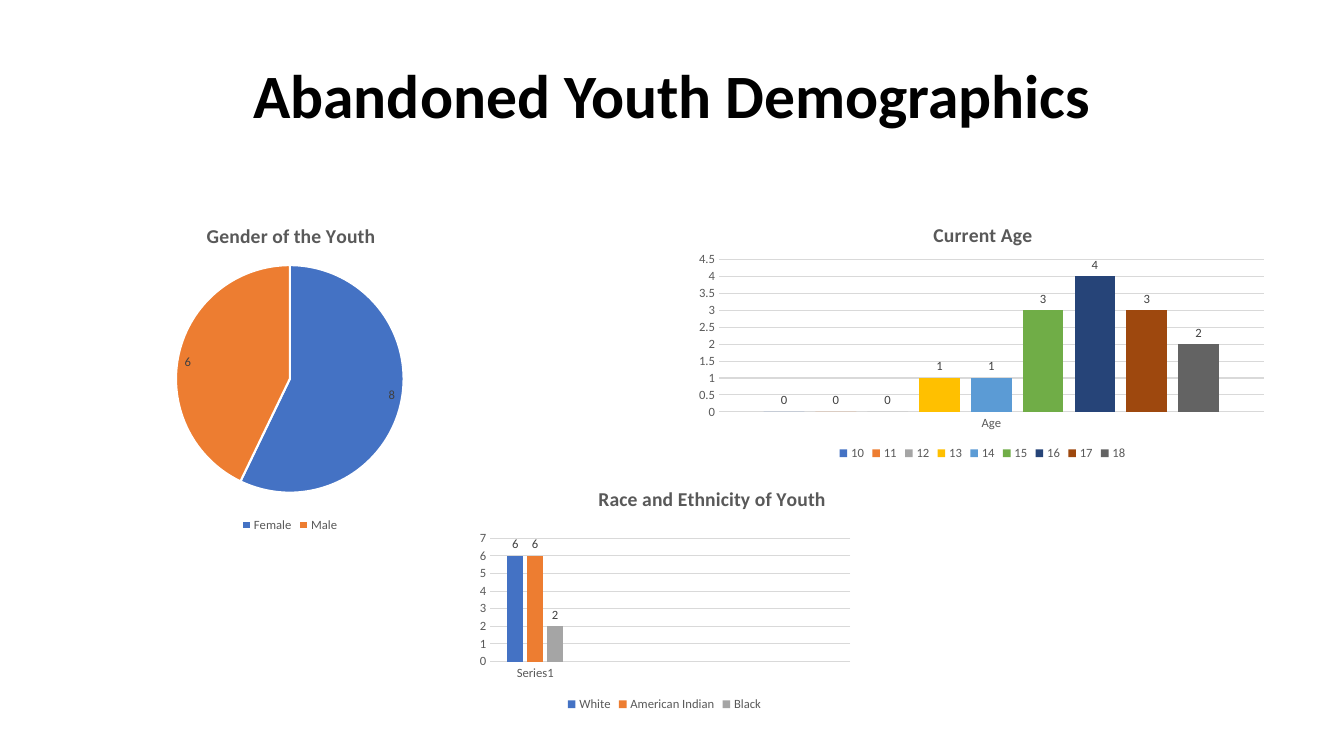
from lxml.etree import SubElement
from pptx import Presentation
from pptx.chart.data import CategoryChartData
from pptx.dml.color import RGBColor
from pptx.enum.chart import XL_CHART_TYPE, XL_LABEL_POSITION, XL_LEGEND_POSITION, XL_TICK_MARK
from pptx.enum.text import MSO_ANCHOR, PP_ALIGN
from pptx.oxml.ns import qn
from pptx.util import Inches, Pt


def style(font, size, color, bold=False):
    font.name = "Calibri"
    font.size = Pt(size)
    font.bold = bold
    font.color.rgb = RGBColor.from_string(color)


def place(parent, index, **fractions):
    for old in parent.findall(qn("c:layout")):
        parent.remove(old)
    layout = SubElement(parent, qn("c:layout"))
    manual = SubElement(layout, qn("c:manualLayout"))
    if "w" in fractions:
        SubElement(manual, qn("c:layoutTarget"), val="inner")
    for axis in "xy":
        SubElement(manual, qn(f"c:{axis}Mode"), val="edge")
    for key, value in fractions.items():
        SubElement(manual, qn(f"c:{key}"), val=str(value))
    parent.insert(index, layout)


PALETTE = ["4472C4", "ED7D31", "A5A5A5", "FFC000", "5B9BD5",
           "70AD47", "264478", "9E480E", "636363"]
GRAY, GRID = "595959", "D9D9D9"

ages = {"10": 0, "11": 0, "12": 0, "13": 1, "14": 1, "15": 3, "16": 4, "17": 3, "18": 2}
races = {"White": 6, "American Indian": 6, "Black": 2}

demographics = [
    ("Gender of the Youth", XL_CHART_TYPE.PIE, (0.92, 2, 3.91, 3.32),
     ["Female", "Male"], {"Gender of the Youth": [8, 6]}, None,
     (0.28, 0.05), (0.21, 0.19, 0.58, 0.68)),
    ("Current Age", XL_CHART_TYPE.COLUMN_CLUSTERED, (6.84, 2, 5.81, 2.61),
     ["Age"], {age: [count] for age, count in ages.items()}, (4.5, 0.5),
     (0.41, 0.06), (0.05, 0.22, 0.93, 0.58)),
    ("Race and Ethnicity of Youth", XL_CHART_TYPE.COLUMN_CLUSTERED, (4.67, 4.55, 3.84, 2.55),
     ["Series1", "", "", ""],
     {race: [count, None, None, None] for race, count in races.items()}, (7, 1),
     (0.32, 0.09), (0.05, 0.31, 0.93, 0.48)),
]

deck = Presentation()
deck.slide_width, deck.slide_height = Inches(13.33), Inches(7.5)
slide = deck.slides.add_slide(deck.slide_layouts[6])

heading = slide.shapes.add_textbox(Inches(0.92), Inches(0.4), Inches(11.5), Inches(1.16)).text_frame
heading.word_wrap = True
heading.vertical_anchor = MSO_ANCHOR.MIDDLE
heading.text = "Abandoned Youth Demographics"
headline = heading.paragraphs[0]
headline.alignment = PP_ALIGN.CENTER
headline.line_spacing = 0.9
style(headline.runs[0].font, 44, "000000", True)

for title, kind, box, categories, counts, scale, title_spot, plot_box in demographics:
    data = CategoryChartData()
    data.categories = categories
    for name, values in counts.items():
        data.add_series(name, values)
    chart = slide.shapes.add_chart(kind, *map(Inches, box), data).chart
    style(chart.font, 10, "000000")

    chart.has_title = True
    caption = chart.chart_title
    caption.text_frame.text = title
    style(caption.text_frame.paragraphs[0].runs[0].font, 14, GRAY, True)
    caption.include_in_layout = False
    place(caption._element, 1, **dict(zip("xy", title_spot)))
    place(chart._chartSpace.chart.plotArea, 0, **dict(zip("xywh", plot_box)))

    chart.has_legend = True
    chart.legend.position = XL_LEGEND_POSITION.BOTTOM
    chart.legend.include_in_layout = False
    style(chart.legend.font, 9, GRAY)

    plot = chart.plots[0]
    is_pie = kind == XL_CHART_TYPE.PIE
    plot.vary_by_categories = is_pie
    for series in plot.series:
        labels = series.data_labels
        labels.show_value = True
        labels.position = XL_LABEL_POSITION.INSIDE_END if is_pie else XL_LABEL_POSITION.OUTSIDE_END
        style(labels.font, 9, "404040")

    if is_pie:
        parts = [plot.series[0].points[i] for i in range(len(categories))]
    else:
        parts = plot.series
    for part, color in zip(parts, PALETTE):
        part.format.fill.solid()
        part.format.fill.fore_color.rgb = RGBColor.from_string(color)
        if is_pie:
            part.format.line.color.rgb = RGBColor.from_string("FFFFFF")
            part.format.line.width = Pt(1.5)

    if not is_pie:
        plot.gap_width, plot.overlap = 219, -27
        counts_axis = chart.value_axis
        counts_axis.minimum_scale = 0
        counts_axis.maximum_scale, counts_axis.major_unit = scale
        for axis in (chart.category_axis, counts_axis):
            axis.major_tick_mark = axis.minor_tick_mark = XL_TICK_MARK.NONE
            style(axis.tick_labels.font, 9, GRAY)
        counts_axis.format.line.fill.background()
        for line in (chart.category_axis.format.line, counts_axis.major_gridlines.format.line):
            line.color.rgb = RGBColor.from_string(GRID)
            line.width = Pt(0.75)

deck.save("out.pptx")
